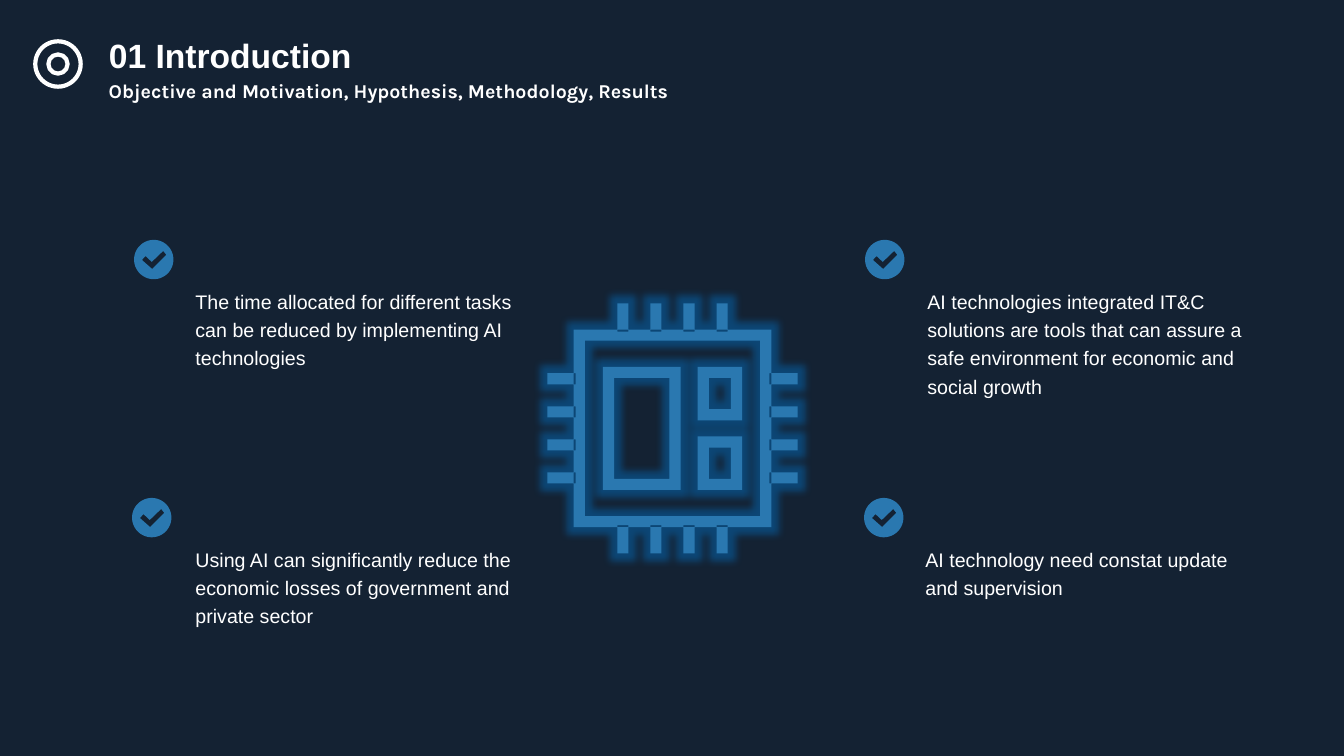
from math import cos, pi, sin
from lxml.etree import SubElement
from pptx import Presentation
from pptx.dml.color import RGBColor
from pptx.enum.shapes import MSO_SHAPE
from pptx.enum.text import MSO_ANCHOR, PP_ALIGN
from pptx.oxml.ns import qn
from pptx.util import Inches, Pt

NAVY = RGBColor(0x14, 0x22, 0x33)
BLUE = RGBColor(0x2A, 0x78, 0xB0)
GLOW = RGBColor(0x00, 0x7C, 0xD8)
WHITE = RGBColor(0xFF, 0xFF, 0xFF)

# Content
TITLE = "01 Introduction"
SUBTITLE = "Objective and Motivation, Hypothesis, Methodology, Results"
# Badge left, badge top, text left, text height, wording
POINTS = [
    (1.33, 2.38, 1.84, 0.95, "The time allocated for different tasks can be reduced "
     "by implementing AI technologies"),
    (8.58, 2.38, 9.1, 1.23, "AI technologies integrated IT&C solutions are tools that "
     "can assure a safe environment for economic and social growth"),
    (1.31, 4.94, 1.84, 0.95, "Using AI can significantly reduce the economic losses "
     "of government and private sector"),
    (8.57, 4.94, 9.08, 0.66, "AI technology need constat update and supervision"),
]

# Sizes in inches
BADGE = 0.39
TEXT_WIDTH = 3.4
# Tick corners as shares of the badge
TICK = [(0.46, 0.74), (0.2, 0.51), (0.29, 0.41), (0.45, 0.56), (0.74, 0.28), (0.82, 0.38)]
BAR = 0.11
PIN_LENGTH = 0.28
PIN_PITCH = 0.328
CHIP_LEFT, CHIP_TOP, CHIP_SIZE = 5.43, 3.01, 2.48
# Frames of the chip: left, top, width, height
FRAMES = [(5.69, 3.27, 1.96, 1.96), (5.98, 3.64, 0.77, 1.22),
          (6.92, 3.64, 0.44, 0.53), (6.92, 4.33, 0.44, 0.53)]

presentation = Presentation()
presentation.slide_width = Inches(13.33)
presentation.slide_height = Inches(7.5)
slide = presentation.slides.add_slide(presentation.slide_layouts[5])
slide.background.fill.solid()
slide.background.fill.fore_color.rgb = NAVY


def format_text(shape, text, size, bold=False, font_name="Arial", space_before=0):
    frame = shape.text_frame
    frame.word_wrap = True
    frame.vertical_anchor = MSO_ANCHOR.TOP
    frame.text = text
    paragraph = frame.paragraphs[0]
    paragraph.alignment = PP_ALIGN.LEFT
    paragraph.line_spacing = 1.2
    paragraph.space_before = Pt(space_before)
    paragraph.font.name = font_name
    paragraph.font.size = Pt(size)
    paragraph.font.bold = bold
    paragraph.font.color.rgb = WHITE


def add_text(left, top, width, height, text, size, **style):
    box = slide.shapes.add_textbox(Inches(left), Inches(top), Inches(width), Inches(height))
    format_text(box, text, size, **style)


def add_outline(contours):
    """Draw closed contours, given in inches, as one blue shape."""
    contours = [[(Inches(x), Inches(y)) for x, y in contour] for contour in contours]
    builder = slide.shapes.build_freeform(*contours[0][0])
    for index, contour in enumerate(contours):
        if index:
            builder.move_to(*contour[0])
        builder.add_line_segments(contour[1:], close=True)
    shape = builder.convert_to_shape()
    shape.shadow.inherit = False
    shape.fill.solid()
    shape.fill.fore_color.rgb = BLUE
    shape.line.fill.background()
    return shape


def rectangle(left, top, width, height):
    right, bottom = left + width, top + height
    return [(left, top), (right, top), (right, bottom), (left, bottom)]


# Title and subtitle
title = slide.shapes.title
title.left, title.top = Inches(0.98), Inches(0.22)
title.width, title.height = Inches(5.98), Inches(0.58)
format_text(title, TITLE, 24, bold=True)
add_text(0.98, 0.69, 7.85, 0.38, SUBTITLE, 14, bold=True, font_name="Karla", space_before=10)

# Ring mark beside the title
for offset, diameter in ((0, 0.45), (0.13, 0.19)):
    ring = slide.shapes.add_shape(MSO_SHAPE.OVAL, Inches(0.35 + offset), Inches(0.41 + offset),
                                  Inches(diameter), Inches(diameter))
    ring.shadow.inherit = False
    ring.fill.background()
    ring.line.color.rgb = WHITE
    ring.line.width = Pt(3)

# Points, each with a tick badge
for left, top, text_left, text_height, text in POINTS:
    radius = BADGE / 2
    angles = [2 * pi * step / 72 for step in range(72)]
    circle = [(left + radius * (1 + cos(a)), top + radius * (1 + sin(a))) for a in angles]
    tick = [(left + BADGE * x, top + BADGE * y) for x, y in TICK]
    add_outline([circle, tick])
    add_text(text_left, top + BADGE + 0.01, TEXT_WIDTH, text_height, text, 14)

# Chip: frames with a hole each, then four pins on every side
contours = []
for left, top, width, height in FRAMES:
    contours.append(rectangle(left, top, width, height))
    contours.append(rectangle(left + BAR, top + BAR, width - 2 * BAR, height - 2 * BAR))
first_pin = (CHIP_SIZE - 3 * PIN_PITCH - BAR) / 2
for pin in range(4):
    along = first_pin + pin * PIN_PITCH
    for across in (0, CHIP_SIZE - PIN_LENGTH):
        contours.append(rectangle(CHIP_LEFT + along, CHIP_TOP + across, BAR, PIN_LENGTH))
        contours.append(rectangle(CHIP_LEFT + across, CHIP_TOP + along, PIN_LENGTH, BAR))
chip = add_outline(contours)

# Glow around the chip
effects = chip._element.spPr.find(qn("a:effectLst"))
glow = SubElement(effects, qn("a:glow"), rad=str(Pt(11)))
color = SubElement(glow, qn("a:srgbClr"), val=str(GLOW))
SubElement(color, qn("a:alpha"), val="40000")

presentation.save("out.pptx")
